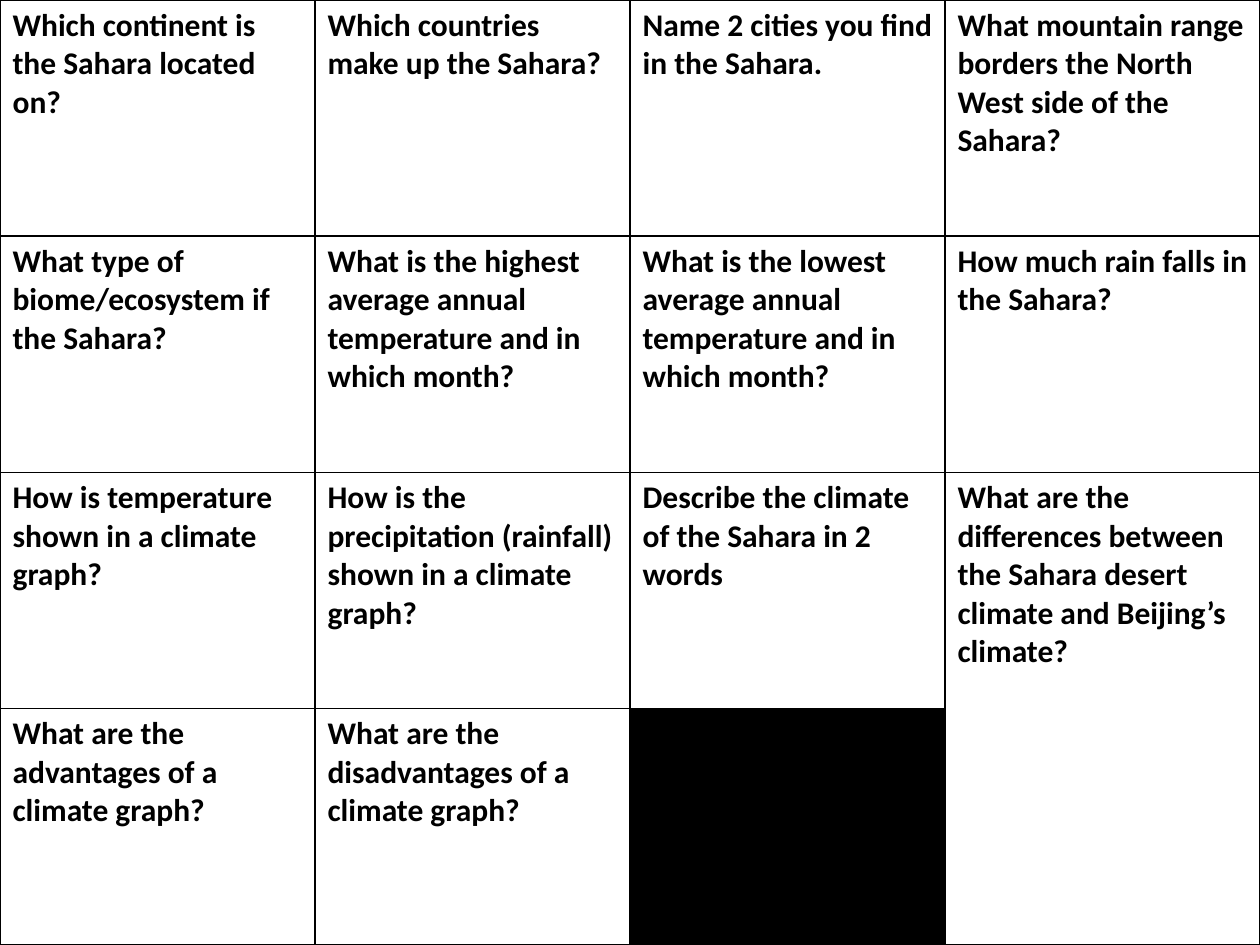
from dataclasses import dataclass

from lxml import etree
from pptx import Presentation
from pptx import util as u
from pptx.dml.color import RGBColor
from pptx.oxml import ns

ROWS, COLUMNS = 4, 4
WIDTH, HEIGHT = u.Inches(10), u.Inches(7.5)
BLACK, WHITE = "000000", "FFFFFF"


@dataclass
class Question:
    text: str
    fill: str = WHITE
    row_span: int = 1


QUESTIONS = [
    [
        Question("Which continent is the Sahara located on?"),
        Question("Which countries make up the Sahara?"),
        Question("Name 2 cities you find in the Sahara."),
        Question("What mountain range borders the North West side of the Sahara?"),
    ],
    [
        Question("What type of biome/ecosystem if the Sahara?"),
        Question("What is the highest average annual temperature and in which month?"),
        Question("What is the lowest average annual temperature and in which month?"),
        Question("How much rain falls in the Sahara?"),
    ],
    [
        Question("How is temperature shown in a climate graph?"),
        Question("How is the precipitation (rainfall) shown in a climate graph?"),
        Question("Describe the climate of the Sahara in 2 words"),
        Question(
            "What are the differences between the Sahara desert climate and Beijing’s climate?",
            row_span=2,
        ),
    ],
    [
        Question("What are the advantages of a climate graph?"),
        Question("What are the disadvantages of a climate graph?"),
        Question("", fill=BLACK),
    ],
]


def color(value: str) -> RGBColor:
    return RGBColor.from_string(value)


def add_borders(cell, value: str, width: u.Length) -> None:
    """Border all four sides; call before filling, as the schema puts lines first."""
    properties = cell._tc.get_or_add_tcPr()
    for side in ("lnL", "lnR", "lnT", "lnB"):
        line = etree.SubElement(properties, ns.qn(f"a:{side}"), w=str(int(width)))
        fill = etree.SubElement(line, ns.qn("a:solidFill"))
        etree.SubElement(fill, ns.qn("a:srgbClr"), val=value)


def fill_cell(cell, question: Question) -> None:
    cell.fill.solid()
    cell.fill.fore_color.rgb = color(question.fill)
    if question.text:
        run = cell.text_frame.paragraphs[0].add_run()
        run.text = question.text
        run.font.name = "Calibri"
        run.font.size = u.Pt(18)
        run.font.bold = True
        run.font.color.rgb = color(BLACK)


def add_question_grid(slide, questions: list[list[Question]]) -> None:
    table = slide.shapes.add_table(ROWS, COLUMNS, 0, 0, WIDTH, HEIGHT).table
    table.first_row = table.horz_banding = False
    for cell in table.iter_cells():
        add_borders(cell, BLACK, u.Pt(1))
    for row, row_questions in enumerate(questions):
        for column, question in enumerate(row_questions):
            cell = table.cell(row, column)
            if question.row_span > 1:
                cell.merge(table.cell(row + question.row_span - 1, column))
            fill_cell(cell, question)


def main() -> None:
    presentation = Presentation()
    presentation.slide_width, presentation.slide_height = WIDTH, HEIGHT
    slide = presentation.slides.add_slide(presentation.slide_layouts[6])
    add_question_grid(slide, QUESTIONS)
    presentation.save("out.pptx")


if __name__ == "__main__":
    main()
